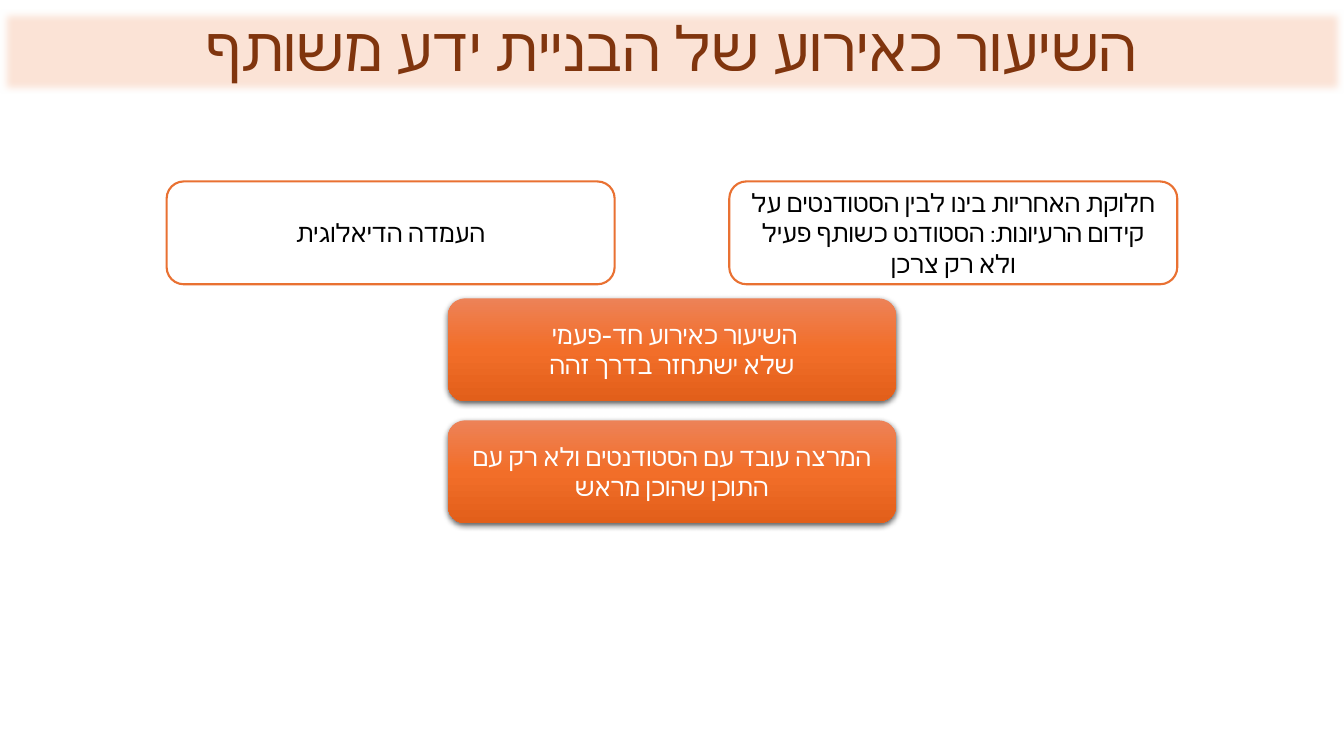
from lxml import etree
from pptx import Presentation
from pptx.dml.color import RGBColor
from pptx.enum import shapes, text
from pptx.oxml import parse_xml
from pptx.oxml.ns import nsdecls, qn
from pptx.util import Inches, Pt

COLOURS = {
    "band": "FBE3D6", "title": "80350E", "outline": "E97132",
    "white": "FFFFFF", "black": "000000",
    "top": "ED8257", "middle": "F26E29", "bottom": "E25F1A",
}


def rgb(name):
    return RGBColor.from_string(COLOURS[name])


def write(shape, words, font_name, size, colour):
    """Put one centred paragraph into a shape, Hebrew font included."""
    frame = shape.text_frame
    frame.text = words
    frame.word_wrap = True
    frame.auto_size = text.MSO_AUTO_SIZE.NONE
    frame.vertical_anchor = text.MSO_ANCHOR.MIDDLE
    para = frame.paragraphs[0]
    para.alignment = text.PP_ALIGN.CENTER
    para.font.name = font_name
    para.font.size = Pt(size)
    para.font.color.rgb = rgb(colour)
    default = para._p.pPr.find(qn("a:defRPr"))
    etree.SubElement(default, qn("a:cs"), typeface=font_name)
    return para


deck = Presentation()
deck.slide_width, deck.slide_height = Inches(13.33), Inches(7.5)
page = deck.slides.add_slide(deck.slide_layouts[5])

# Title band with soft edges
title = page.shapes.title
title.left, title.top = 0, Inches(0.09)
title.width, title.height = deck.slide_width, Inches(0.84)
title.fill.solid()
title.fill.fore_color.rgb = rgb("band")
title._element.spPr.append(parse_xml(
    f'<a:effectLst {nsdecls("a")}><a:softEdge rad="{Pt(5)}"/></a:effectLst>'))
heading = write(title, "השיעור כאירוע של הבניית ידע משותף", "Calibri", 44, "title")
heading.line_spacing = 0.9
heading._p.pPr.set("rtl", "1")

# Gradient and shadow of the filled boxes
stops = "".join(
    f'<a:gs pos="{position}"><a:srgbClr val="{COLOURS[name]}"/></a:gs>'
    for position, name in ((0, "top"), (50000, "middle"), (100000, "bottom")))
GRADIENT = (f'<a:gradFill {nsdecls("a")} rotWithShape="1"><a:gsLst>{stops}</a:gsLst>'
            '<a:lin ang="5400000" scaled="0"/></a:gradFill>')
SHADOW = (f'<a:effectLst {nsdecls("a")}><a:outerShdw blurRad="{Pt(4.5)}" '
          f'dist="{Pt(1.5)}" dir="5400000" algn="ctr" rotWithShape="0">'
          f'<a:srgbClr val="{COLOURS["black"]}"><a:alpha val="63000"/></a:srgbClr>'
          '</a:outerShdw></a:effectLst>')

# Boxes: a third of the slide wide, shifted sideways from the centre
box_width, box_height = deck.slide_width // 3, Inches(1.02)
side_shift = Inches(2.79)
boxes = [
    (1, 1.8, False,
     "חלוקת האחריות בינו לבין הסטודנטים על קידום הרעיונות: הסטודנט כשותף פעיל ולא רק צרכן"),
    (-1, 1.8, False, "העמדה הדיאלוגית"),
    (0, 2.96, True, "השיעור כאירוע חד-פעמי \vשלא ישתחזר בדרך זהה"),
    (0, 4.17, True, "המרצה עובד עם הסטודנטים ולא רק עם התוכן שהוכן מראש"),
]
for side, top, filled, words in boxes:
    box = page.shapes.add_shape(
        shapes.MSO_SHAPE.ROUNDED_RECTANGLE,
        box_width + side * side_shift, Inches(top), box_width, box_height)
    box.shadow.inherit = False
    if filled:
        box.line.fill.background()
        properties = box._element.spPr
        properties.find(qn("a:prstGeom")).addnext(parse_xml(GRADIENT))
        properties.replace(properties.find(qn("a:effectLst")), parse_xml(SHADOW))
    else:
        box.fill.solid()
        box.fill.fore_color.rgb = rgb("white")
        box.line.color.rgb = rgb("outline")
        box.line.width = Pt(1.5)
    write(box, words, "Cabin", 18, "white" if filled else "black")

deck.save("out.pptx")
